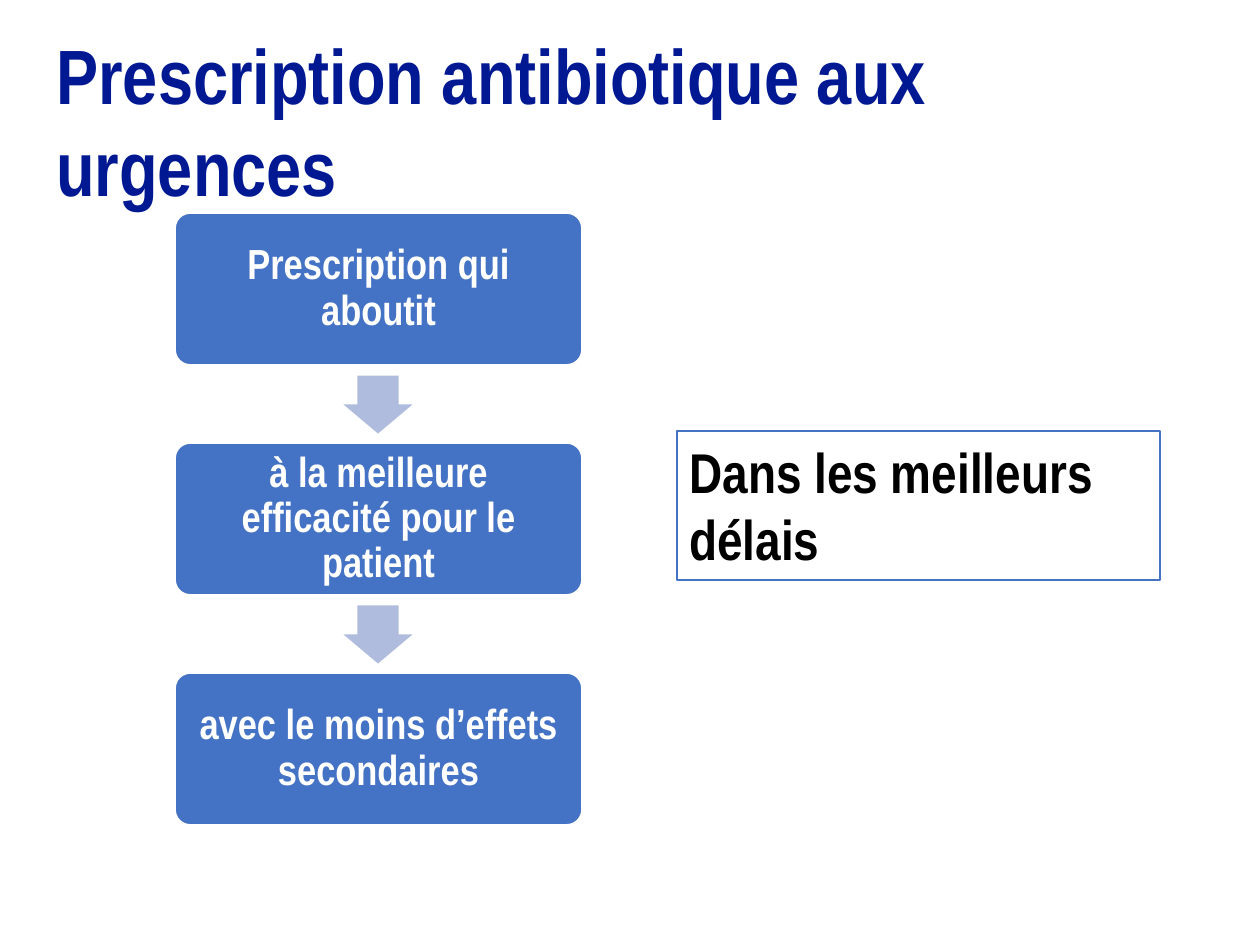
from dataclasses import dataclass

from pptx import Presentation
from pptx.dml.color import RGBColor
from pptx.enum.shapes import MSO_SHAPE
from pptx.enum.text import MSO_ANCHOR, MSO_AUTO_SIZE, PP_ALIGN
from pptx.shapes.autoshape import Shape
from pptx.slide import Slide
from pptx.util import Emu, Pt

DPI = 126


@dataclass(frozen=True)
class Theme:
    font: str = "Arial Narrow"
    navy: str = "011893"
    blue: str = "4472C4"
    pale: str = "B0BCDE"
    white: str = "FFFFFF"
    black: str = "000000"
    title: int = 44
    note: int = 32
    step: int = 24


@dataclass(frozen=True)
class Box:
    left: int
    top: int
    width: int
    height: int

    def emu(self) -> tuple[Emu, ...]:
        sides = (self.left, self.top, self.width, self.height)
        return tuple(px(side) for side in sides)


@dataclass(frozen=True)
class Step:
    text: str
    box: Box


THEME = Theme()
FIRST = Box(175, 213, 407, 152)
ARROW = Box(0, 0, 58, 69)
PITCH = 230
WORDS = (
    "Prescription qui aboutit",
    "à la meilleure efficacité pour le patient",
    "avec le moins d’effets secondaires",
)


def px(count: int) -> Emu:
    return Emu(round(count * 914400 / DPI))


def write(shape: Shape, text: str, *, size: int, color: str,
          align: PP_ALIGN = PP_ALIGN.LEFT,
          anchor: MSO_ANCHOR = MSO_ANCHOR.TOP,
          inset: int | None = None, lead: float | None = None) -> None:
    frame = shape.text_frame
    frame.word_wrap = True
    frame.vertical_anchor = anchor
    if inset is not None:
        frame.margin_left = frame.margin_right = px(inset)
        frame.margin_top = frame.margin_bottom = px(inset)
    para = frame.paragraphs[0]
    para.alignment = align
    para.line_spacing = lead
    run = para.add_run()
    run.text = text
    run.font.name = THEME.font
    run.font.size = Pt(size)
    run.font.bold = True
    run.font.color.rgb = RGBColor.from_string(color)


def draw(slide: Slide, kind: MSO_SHAPE, box: Box, fill: str | None = None,
         line: str | None = None, weight: float = 1) -> Shape:
    shape = slide.shapes.add_shape(kind, *box.emu())
    shape.shadow.inherit = False
    if fill:
        shape.fill.solid()
        shape.fill.fore_color.rgb = RGBColor.from_string(fill)
    else:
        shape.fill.background()
    if line:
        shape.line.color.rgb = RGBColor.from_string(line)
        shape.line.width = Pt(weight)
    else:
        shape.line.fill.background()
    return shape


def add_step(slide: Slide, step: Step) -> None:
    card = draw(slide, MSO_SHAPE.ROUNDED_RECTANGLE, step.box,
                THEME.blue, THEME.white)
    card.adjustments[0] = 0.1
    write(card, step.text, size=THEME.step, color=THEME.white,
          align=PP_ALIGN.CENTER, anchor=MSO_ANCHOR.MIDDLE,
          inset=13, lead=0.9)


def add_arrow(slide: Slide, above: Box) -> None:
    mid = above.left + above.width // 2
    gap = above.top + (above.height + PITCH) // 2
    box = Box(mid - ARROW.width // 2, gap - ARROW.height // 2,
              ARROW.width, ARROW.height)
    arrow = draw(slide, MSO_SHAPE.RIGHT_ARROW, box, THEME.pale)
    arrow.rotation = 90
    arrow.adjustments[0] = 0.6
    arrow.adjustments[1] = 0.5


def main() -> None:
    deck = Presentation()
    deck.slide_width, deck.slide_height = px(1260), px(945)
    slide = deck.slides.add_slide(deck.slide_layouts[6])

    steps = [
        Step(text, Box(FIRST.left, FIRST.top + row * PITCH,
                       FIRST.width, FIRST.height))
        for row, text in enumerate(WORDS)
    ]
    for step in steps:
        add_step(slide, step)
    for step in steps[:-1]:
        add_arrow(slide, step.box)

    title = slide.shapes.add_textbox(*Box(44, 21, 1186, 87).emu())
    write(title, "Prescription antibiotique aux urgences",
          size=THEME.title, color=THEME.navy)

    note = draw(slide, MSO_SHAPE.RECTANGLE, Box(677, 431, 483, 149),
                line=THEME.blue, weight=0.75)
    write(note, "Dans les meilleurs délais",
          size=THEME.note, color=THEME.black)
    note.text_frame.auto_size = MSO_AUTO_SIZE.SHAPE_TO_FIT_TEXT

    deck.save("out.pptx")


if __name__ == "__main__":
    main()
